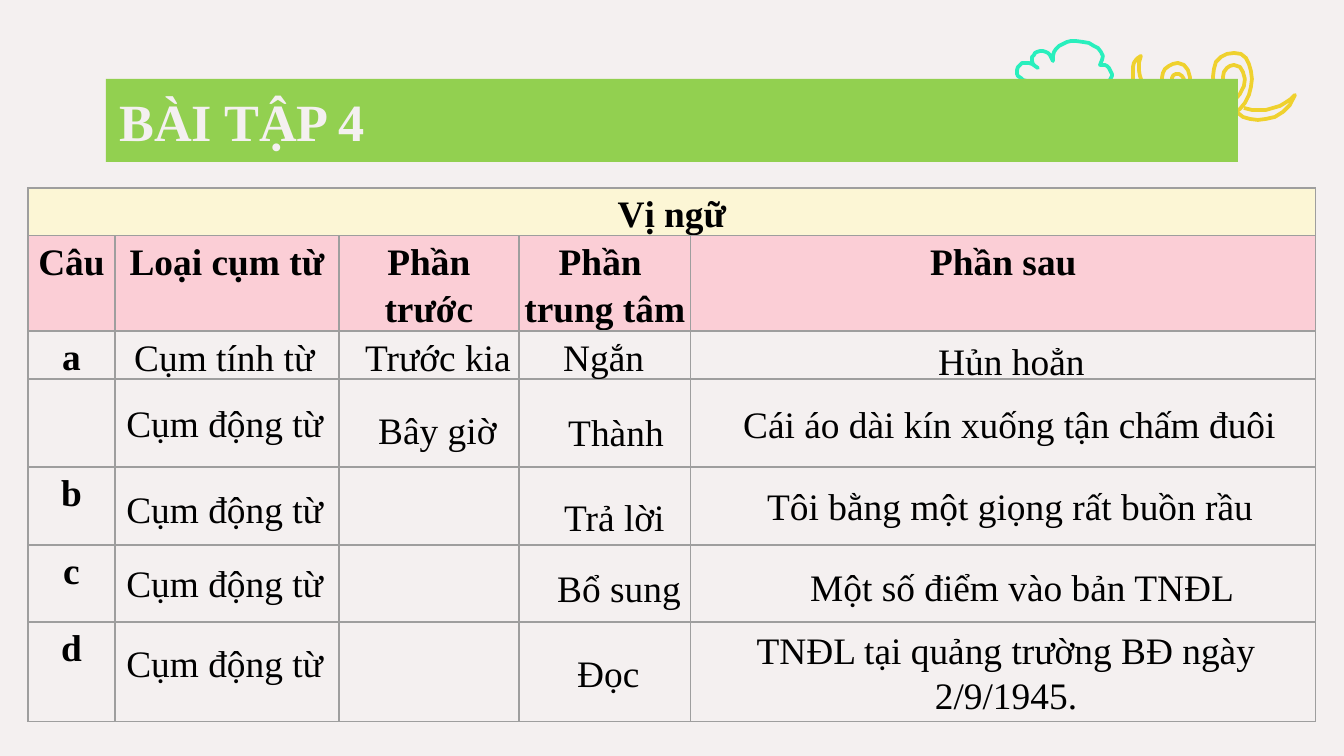
from pptx import Presentation, util as u
from pptx.dml.color import RGBColor
from pptx.enum import text
from pptx.oxml import parse_xml
from pptx.oxml.ns import nsdecls

BACKGROUND = RGBColor(0xF4, 0xF0, 0xF0)
GREEN = RGBColor(0x92, 0xD0, 0x50)
YELLOW = RGBColor(0xEF, 0xD1, 0x2E)
TEAL = RGBColor(0x29, 0xEF, 0xBD)
CREAM = RGBColor(0xFC, 0xF6, 0xD5)
PINK = RGBColor(0xFB, 0xCE, 0xD6)
GREY = RGBColor(0x9E, 0x9E, 0x9E)
BLACK = RGBColor(0, 0, 0)
FONT = "Times New Roman"
PX = 914400 / 134.4

COLUMNS = [87, 224, 180, 172, 625]
ROWS = [47, 95, 48, 88, 78, 77, 100]
HEADINGS = ["Câu", "Loại cụm từ", "Phần trước", "Phần \ntrung tâm", "Phần sau"]
SENTENCES = ["a", "", "b", "c", "d"]

# Answers as (left, top, width, words)
ANSWERS = [
    (121, 328, 208, "Cụm tính từ"),
    (352, 328, 173, "Trước kia"),
    (550, 328, 109, "Ngắn"),
    (925, 332, 175, "Hủn hoẳn"),
    (365, 401, 146, "Bây giờ"),
    (555, 403, 124, "Thành"),
    (730, 395, 563, "Cái áo dài kín xuống tận chấm đuôi"),
    (551, 488, 128, "Trả lời"),
    (754, 477, 516, "Tôi bằng một giọng rất buồn rầu"),
    (544, 559, 152, "Bổ sung"),
    (797, 558, 454, "Một số điểm vào bản TNĐL"),
    (564, 644, 90, "Đọc"),
]
VERB_PHRASE_TOPS = [394, 480, 554, 634]

# Each curve is a start point, then three points for every Bézier segment
CLOUD = [
    [(1076, 41), (1094, 42), (1109, 52), (1100, 65),
     (1106, 64), (1113, 70), (1112, 76), (1110, 82), (1103, 84), (1097, 82),
     (1106, 92), (1096, 97), (1091, 100), (1078, 106), (1062, 105), (1056, 94),
     (1052, 103), (1042, 104), (1036, 101), (1028, 97), (1028, 88), (1031, 82),
     (1019, 80), (1014, 74), (1018, 67), (1022, 60), (1030, 62), (1038, 68),
     (1028, 63), (1032, 54), (1037, 52), (1046, 49), (1052, 55), (1053, 61),
     (1051, 47), (1064, 41), (1076, 41)],
]
SWIRLS = [
    [(1168, 94), (1155, 80), (1164, 63), (1178, 63),
     (1198, 64), (1194, 105), (1163, 108), (1150, 108), (1135, 100), (1133, 82),
     (1133, 72), (1131, 60), (1141, 56), (1133, 75), (1145, 93), (1163, 95),
     (1180, 96), (1190, 78), (1179, 74), (1175, 74), (1168, 74), (1175, 91)],
    [(1178, 105), (1200, 118), (1235, 123), (1245, 103),
     (1256, 84), (1254, 53), (1234, 53), (1214, 52), (1202, 80), (1226, 102)],
    [(1235, 98), (1215, 85), (1223, 65), (1234, 65),
     (1252, 66), (1248, 107), (1215, 107), (1205, 107), (1190, 104), (1182, 100)],
    [(1238, 113), (1250, 124), (1283, 125), (1295, 95),
     (1284, 107), (1265, 114), (1244, 108)],
]


def px(n):
    return u.Emu(round(n * PX))


def style(p, size, color, bold=False):
    p.font.name = FONT
    p.font.size = u.Pt(size)
    p.font.bold = bold
    p.font.color.rgb = color


def sample(curve, steps=8):
    """Return points along a chain of cubic Bézier segments."""
    points = [curve[0]]
    for i in range(0, len(curve) - 1, 3):
        a, b, c, d = curve[i:i + 4]
        for k in range(1, steps + 1):
            t = k / steps
            v = 1 - t
            points.append(tuple(
                v**3 * a[n] + 3 * v * v * t * b[n] + 3 * v * t * t * c[n] + t**3 * d[n]
                for n in (0, 1)))
    return points


def add_doodle(s, curves, color):
    """Draw open curves as one outline behind the title."""
    builder = s.shapes.build_freeform(*curves[0][0], scale=PX)
    for curve in curves:
        points = sample(curve)
        builder.move_to(*points[0])
        builder.add_line_segments(points[1:], close=False)
    sp = builder.convert_to_shape()
    sp.fill.background()
    sp.line.color.rgb = color
    sp.line.width = u.Pt(2)
    sp.shadow.inherit = False
    s.shapes.title.element.addprevious(sp.element)


def set_title(s, words):
    sp = s.shapes.title
    sp.left, sp.top, sp.width, sp.height = px(106), px(79), px(1132), px(83)
    sp.fill.solid()
    sp.fill.fore_color.rgb = GREEN
    tf = sp.text_frame
    tf.text = words
    tf.vertical_anchor = text.MSO_ANCHOR.MIDDLE
    p = tf.paragraphs[0]
    p.alignment = text.PP_ALIGN.LEFT
    style(p, 28, BACKGROUND, True)


def add_borders(cell):
    tcPr = cell._tc.get_or_add_tcPr()
    for i, side in enumerate(("lnL", "lnR", "lnT", "lnB")):
        tcPr.insert(i, parse_xml(
            f'<a:{side} {nsdecls("a")} w="9525"><a:solidFill>'
            f'<a:srgbClr val="{GREY}"/></a:solidFill></a:{side}>'))


def fill_cell(cell, words, fill):
    cell.margin_left = cell.margin_right = px(4)
    cell.margin_top = cell.margin_bottom = 0
    if fill is None:
        cell.fill.background()
    else:
        cell.fill.solid()
        cell.fill.fore_color.rgb = fill
    add_borders(cell)
    cell.text = words
    for p in cell.text_frame.paragraphs:
        p.alignment = text.PP_ALIGN.CENTER
        p.line_spacing = 1.15
        style(p, 20, BLACK, True)


def add_grid(s):
    table = s.shapes.add_table(len(ROWS), len(COLUMNS), px(28), px(188),
                               px(sum(COLUMNS)), px(sum(ROWS))).table
    table.first_row = table.horz_banding = False
    for column, width in zip(table.columns, COLUMNS):
        column.width = px(width)
    for row, height in zip(table.rows, ROWS):
        row.height = px(height)
    table.cell(0, 0).merge(table.cell(0, len(COLUMNS) - 1))
    blanks = [""] * (len(COLUMNS) - 1)
    contents = [["Vị ngữ"] + blanks, HEADINGS] + [[c] + blanks for c in SENTENCES]
    fills = [CREAM, PINK] + [None] * len(SENTENCES)
    for row, words, fill in zip(table.rows, contents, fills):
        for cell, word in zip(row.cells, words):
            fill_cell(cell, word, fill)


def add_answer(s, left, top, width, words, height=59, wrap=False):
    tf = s.shapes.add_textbox(px(left), px(top), px(width), px(height)).text_frame
    tf.word_wrap = wrap
    tf.text = words
    p = tf.paragraphs[0]
    if wrap:
        p.alignment = text.PP_ALIGN.CENTER
    style(p, 20, BLACK)


def main():
    prs = Presentation()
    prs.slide_width, prs.slide_height = px(1344), px(756)
    s = prs.slides.add_slide(prs.slide_layouts[5])
    s.background.fill.solid()
    s.background.fill.fore_color.rgb = BACKGROUND
    add_doodle(s, SWIRLS, YELLOW)
    add_doodle(s, CLOUD, TEAL)
    set_title(s, "BÀI TẬP 4")
    add_grid(s)
    for answer in ANSWERS:
        add_answer(s, *answer)
    for top in VERB_PHRASE_TOPS:
        add_answer(s, 113, top, 226, "Cụm động từ")
    add_answer(s, 695, 621, 622, "TNĐL tại quảng trường BĐ ngày 2/9/1945.", 103, True)
    prs.save("out.pptx")


if __name__ == "__main__":
    main()
